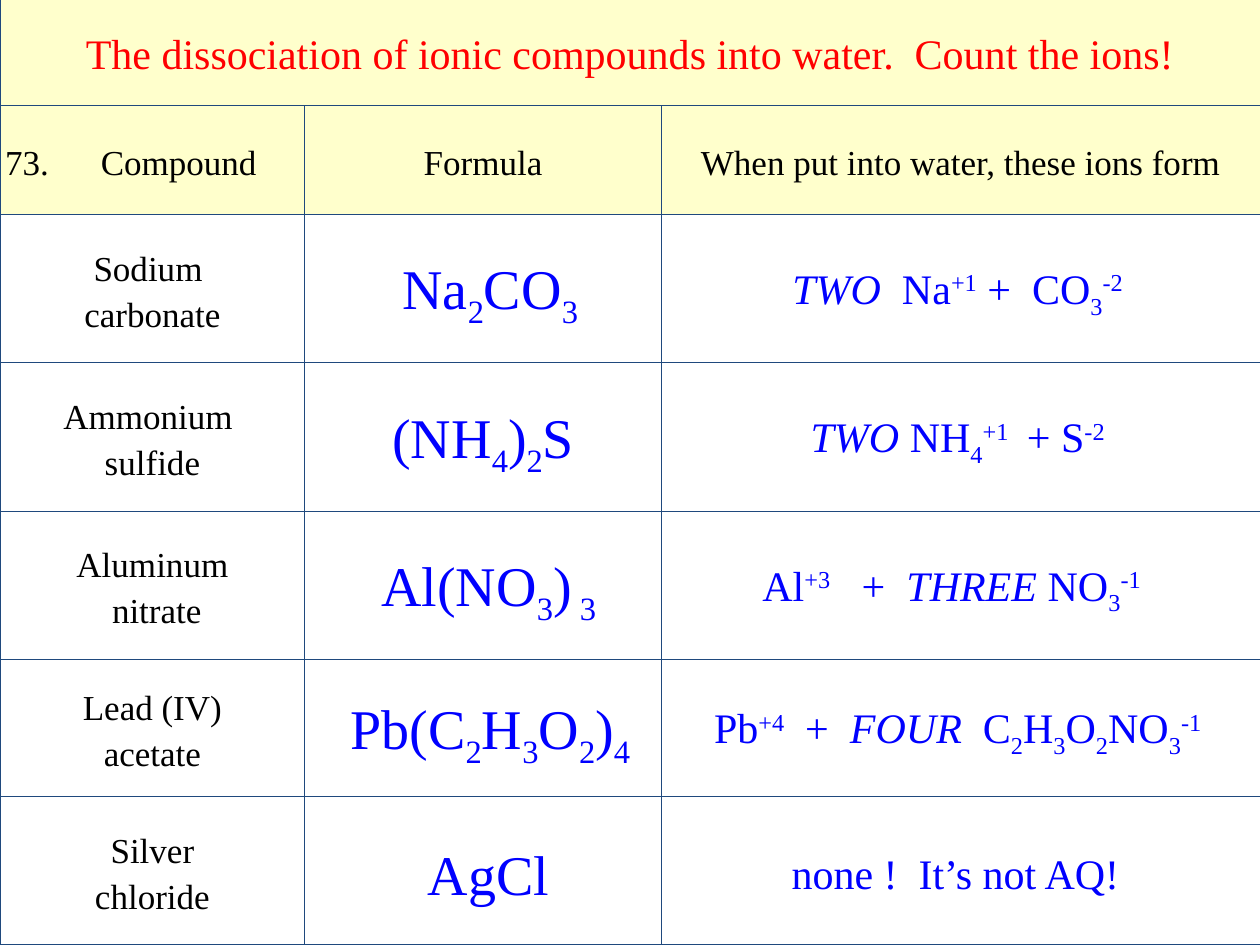
"""Build a slide with a table of ionic compounds and the ions they form in water."""
from dataclasses import dataclass

from lxml.etree import SubElement
from pptx import Presentation
from pptx.dml.color import RGBColor
from pptx.enum.text import MSO_ANCHOR, PP_ALIGN
from pptx.oxml.ns import qn
from pptx.util import Inches, Pt


@dataclass(frozen=True)
class Theme:
    font: str = "Times New Roman"
    title: str = "FF0000"
    label: str = "000000"
    answer: str = "0000FF"
    band: str = "FFFFCC"
    rule: str = "1F497D"
    title_size: int = 24
    label_size: int = 20
    formula_size: int = 32
    ions_size: int = 24
    rule_width: float = 0.5
    line_spacing: float = 1.19
    space_after: int = 6
    inset: float = 0.04
    tab_stop: float = 0.76


TITLE = "The dissociation of ionic compounds into water.  Count the ions!"
HEADINGS = ["73.\tCompound", "Formula", "When put into water, these ions form"]
COMPOUNDS = [
    ["Sodium \ncarbonate", " Na_2_CO_3_", "*TWO * Na^+1^ +  CO_3_^-2 ^"],
    ["Ammonium \nsulfide", "(NH_4_)_2_S", "*TWO* NH_4_^+1   ^+ S^-2 ^"],
    ["Aluminum\n nitrate", " Al(NO_3_)_ 3_", "Al^+3^   +  *THREE* NO_3_^-1   ^"],
    ["Lead (IV)\nacetate", " Pb(C_2_H_3_O_2_)_4_",
     "Pb^+4^  +  *FOUR*  C_2_H_3_O_2_NO_3_^-1 ^"],
    ["Silver\nchloride", " AgCl", " none !  It’s not AQ!  "],
]
COLUMN_SHARES = [0.242, 0.283, 0.475]
ROW_SHARES = [0.116, 0.115, 0.157, 0.157, 0.157, 0.145, 0.157]
TABLE_TOP = -0.004
BASELINES = {"_": "-25000", "^": "30000"}


def split_markup(text):
    """Yield pieces of text with the mark (_ sub, ^ super, * italic) around each."""
    mark, piece = "", ""
    for letter in text:
        if letter in "_^*":
            if piece:
                yield piece, mark
            mark, piece = ("" if mark == letter else letter), ""
        else:
            piece += letter
    if piece:
        yield piece, mark


class SlideBuilder:
    """Hold the theme and the current slide, and add elements to it."""

    def __init__(self, deck, theme):
        self.deck, self.theme = deck, theme
        self.slide = deck.slides.add_slide(deck.slide_layouts[6])

    def table(self, top, column_shares, row_shares):
        """Add a plain ruled table sized in shares of the slide."""
        width, height = self.deck.slide_width, self.deck.slide_height
        frame = self.slide.shapes.add_table(
            len(row_shares), len(column_shares), 0, int(top * height),
            width, int(sum(row_shares) * height))
        table = frame.table
        table.first_row = table.horz_banding = False
        for column, share in zip(table.columns, column_shares):
            column.width = int(share * width)
        for row, share in zip(table.rows, row_shares):
            row.height = int(share * height)
        for cell in table.iter_cells():
            self.borders(cell)
            cell.fill.background()
        return table

    def borders(self, cell):
        """Rule all four sides of a cell."""
        properties = cell._tc.get_or_add_tcPr()
        for side in ("a:lnL", "a:lnR", "a:lnT", "a:lnB"):
            line = SubElement(properties, qn(side), w=str(Pt(self.theme.rule_width)))
            fill = SubElement(line, qn("a:solidFill"))
            SubElement(fill, qn("a:srgbClr"), val=self.theme.rule)

    def cell_text(self, cell, text, size, color, band=None):
        """Put marked-up text into a cell."""
        theme = self.theme
        if band:
            cell.fill.solid()
            cell.fill.fore_color.rgb = RGBColor.from_string(band)
        cell.vertical_anchor = MSO_ANCHOR.MIDDLE
        cell.margin_left = cell.margin_right = Inches(theme.inset)
        cell.margin_top = cell.margin_bottom = Inches(theme.inset)
        para = cell.text_frame.paragraphs[0]
        para.line_spacing = theme.line_spacing
        para.space_after = Pt(theme.space_after)
        para.alignment = PP_ALIGN.CENTER
        if "\t" in text:
            para.alignment = PP_ALIGN.LEFT
            tabs = SubElement(para._p.get_or_add_pPr(), qn("a:tabLst"))
            SubElement(tabs, qn("a:tab"), pos=str(Inches(theme.tab_stop)), algn="l")
        for index, line in enumerate(text.split("\n")):
            if index:
                para.add_line_break()
            for piece, mark in split_markup(line):
                self.span(para, piece, mark, size, color)

    def span(self, para, piece, mark, size, color):
        """Add one run with its size, colour and mark."""
        span = para.add_run()
        span.text = piece
        font = span.font
        font.name, font.size = self.theme.font, Pt(size)
        font.color.rgb = RGBColor.from_string(color)
        if mark == "*":
            font.italic = True
        elif mark:
            span._r.get_or_add_rPr().set("baseline", BASELINES[mark])


def main():
    """Build and save the deck."""
    theme = Theme()
    deck = Presentation()
    deck.slide_width, deck.slide_height = Inches(10), Inches(7.5)
    page = SlideBuilder(deck, theme)
    table = page.table(TABLE_TOP, COLUMN_SHARES, ROW_SHARES)

    title = table.cell(0, 0)
    title.merge(table.cell(0, len(COLUMN_SHARES) - 1))
    page.cell_text(title, TITLE, theme.title_size, theme.title, theme.band)
    for column, heading in enumerate(HEADINGS):
        page.cell_text(table.cell(1, column), heading, theme.label_size, theme.label, theme.band)

    styles = [(theme.label_size, theme.label), (theme.formula_size, theme.answer),
              (theme.ions_size, theme.answer)]
    for row, compound in enumerate(COMPOUNDS, start=2):
        for column, (text, style) in enumerate(zip(compound, styles)):
            page.cell_text(table.cell(row, column), text, *style)
    deck.save("out.pptx")


if __name__ == "__main__":
    main()
